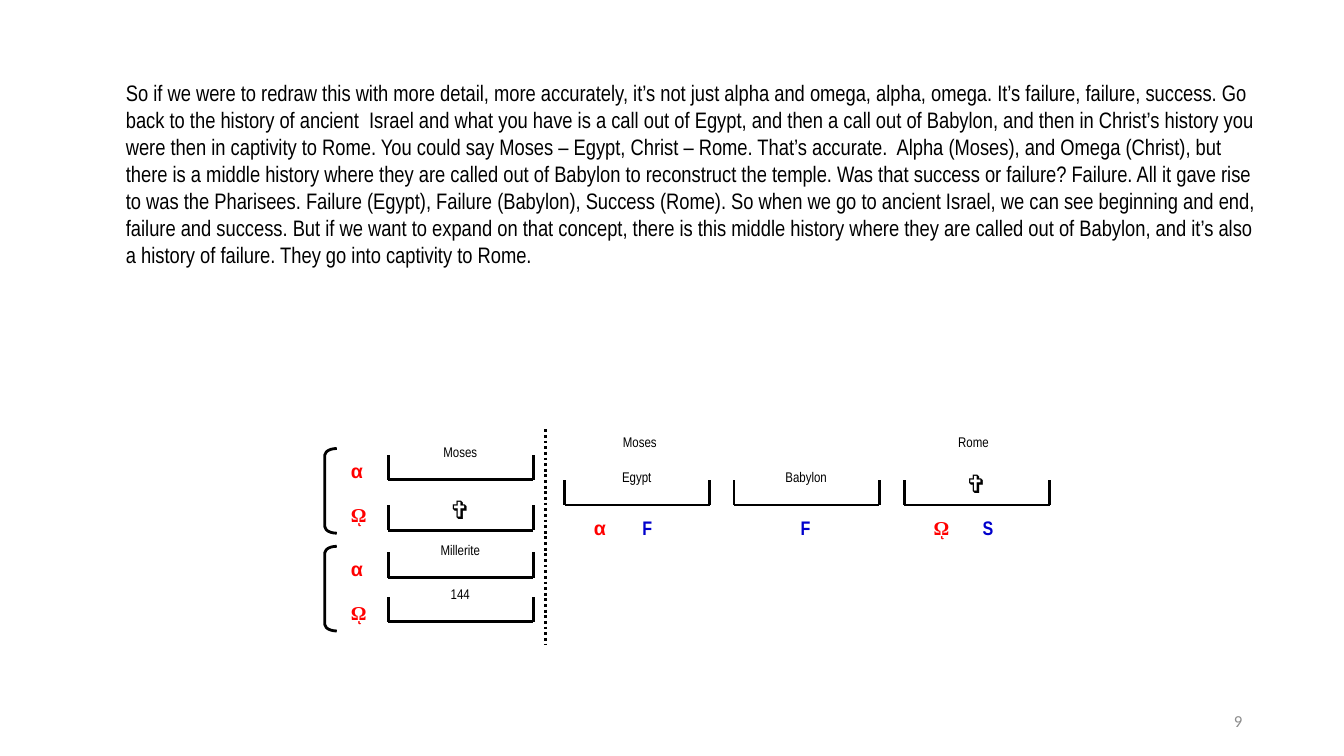
"""Build the slide on alpha, omega and the middle history of ancient Israel."""
from dataclasses import dataclass

from lxml import etree
from pptx import Presentation
from pptx.dml.color import RGBColor
from pptx.enum import dml, shapes, text
from pptx.oxml import ns
from pptx.util import Inches, Pt


@dataclass(frozen=True)
class Theme:
    black: str = "000000"
    red: str = "FF0000"
    blue: str = "0000CC"
    gray: str = "8C8C8C"
    narrow: str = "Arial Narrow"
    body: int = 16
    mark: int = 14
    small: int = 10
    page: int = 12
    cross: int = 18
    rule: int = 2


theme = Theme()
deck = Presentation()
deck.slide_width, deck.slide_height = Inches(13.33), Inches(7.5)
slide = deck.slides.add_slide(deck.slide_layouts[6])


def label(words, box, font, size, color, bold=False, align="CENTER", inset=0.04):
    item = slide.shapes.add_textbox(*map(Inches, box))
    frame = item.text_frame
    frame.word_wrap = True
    frame.margin_left = frame.margin_right = Inches(inset)
    frame.margin_top = frame.margin_bottom = Inches(min(inset, 0.05))
    para = frame.paragraphs[0]
    para.alignment = text.PP_ALIGN[align]
    run = para.add_run()
    run.text = words
    run.font.name, run.font.size, run.font.bold = font, Pt(size), bold
    run.font.color.rgb = RGBColor.from_string(color)
    return frame


def rule(x1, y1, x2, y2):
    line = slide.shapes.add_connector(
        shapes.MSO_CONNECTOR.STRAIGHT, *map(Inches, (x1, y1, x2, y2)))
    line.line.color.rgb = RGBColor.from_string(theme.black)
    line.line.width = Pt(theme.rule)
    etree.SubElement(line._element.spPr, ns.qn("a:effectLst"))
    return line


page = label("9", (9.42, 6.95, 3, 0.4), "Calibri", theme.page, theme.gray,
             align="RIGHT", inset=0.1)
page.vertical_anchor = text.MSO_ANCHOR.MIDDLE

story = [
    "So if we were to redraw this with more detail, more accurately, it’s not just "
    "alpha and omega, alpha, omega. It’s failure, failure, success.",
    "Go back to the history of ancient  Israel and what you have is a call out of "
    "Egypt, and then a call out of Babylon, and then in Christ’s history you were "
    "then in captivity to Rome.",
    "You could say Moses – Egypt, Christ – Rome. That’s accurate.  Alpha (Moses), "
    "and Omega (Christ), but there is a middle history where they are called out of "
    "Babylon to reconstruct the temple.",
    "Was that success or failure? Failure. All it gave rise to was the Pharisees. "
    "Failure (Egypt), Failure (Babylon), Success (Rome).",
    "So when we go to ancient Israel, we can see beginning and end, failure and "
    "success. But if we want to expand on that concept, there is this middle history "
    "where they are called out of Babylon, and it’s also a history of failure.",
    "They go into captivity to Rome.",
]
label(" ".join(story), (1.15, 0.74, 11.42, 2.19), theme.narrow, theme.body,
      theme.black, align="LEFT", inset=0.1)

wide, tall = 1.44, 0.25
trays = [
    ("Moses", 3.85, 4.76), ("✞", 3.85, 5.26),
    ("Millerite", 3.85, 5.73), ("144", 3.85, 6.17),
    ("Egypt", 5.6, 5.01), ("Babylon", 7.28, 5.01), ("✞", 8.97, 5.01),
]
for name, left, base in trays:
    right = left + wide
    rule(left, base, right, base)
    for side in (left, right):
        rule(side, base, side, base - tall)
    font, size = (("Arial", theme.cross) if name == "✞"
                  else (theme.narrow, theme.small))
    label(name, (left + 0.34, base - 0.4, 0.75, 0.31), font, size, theme.black)

for name, left in (("Moses", 5.97), ("Rome", 9.28)):
    label(name, (left, 4.26, 0.75, 0.25), theme.narrow, theme.small, theme.black)

greek = [
    ("α", 3.44, 4.51), ("ῼ", 3.44, 4.95), ("α", 3.44, 5.48),
    ("ῼ", 3.44, 5.92), ("α", 5.85, 5.08), ("ῼ", 9.22, 5.08),
]
for sign, left, top in greek:
    font = "Arial" if sign == "α" else "Times New Roman"
    label(sign, (left, top, 0.33, 0.25), font, theme.mark, theme.red,
          bold=True, align="LEFT")

for grade, left in (("F", 6.28), ("F", 7.85), ("S", 9.66)):
    label(grade, (left, 5.08, 0.28, 0.25), theme.narrow, theme.mark, theme.blue,
          bold=True)

for top in (4.45, 5.42):
    brace = slide.shapes.add_shape(
        shapes.MSO_SHAPE.LEFT_BRACKET, *map(Inches, (3.22, top, 0.12, 0.84)))
    brace.adjustments[0] = 0.56
    brace.shadow.inherit = False
    brace.fill.background()
    brace.line.color.rgb = RGBColor.from_string(theme.black)
    brace.line.width = Pt(theme.rule)

split = rule(5.41, 4.26, 5.41, 6.39)
split.line.dash_style = dml.MSO_LINE.ROUND_DOT

deck.save("out.pptx")
